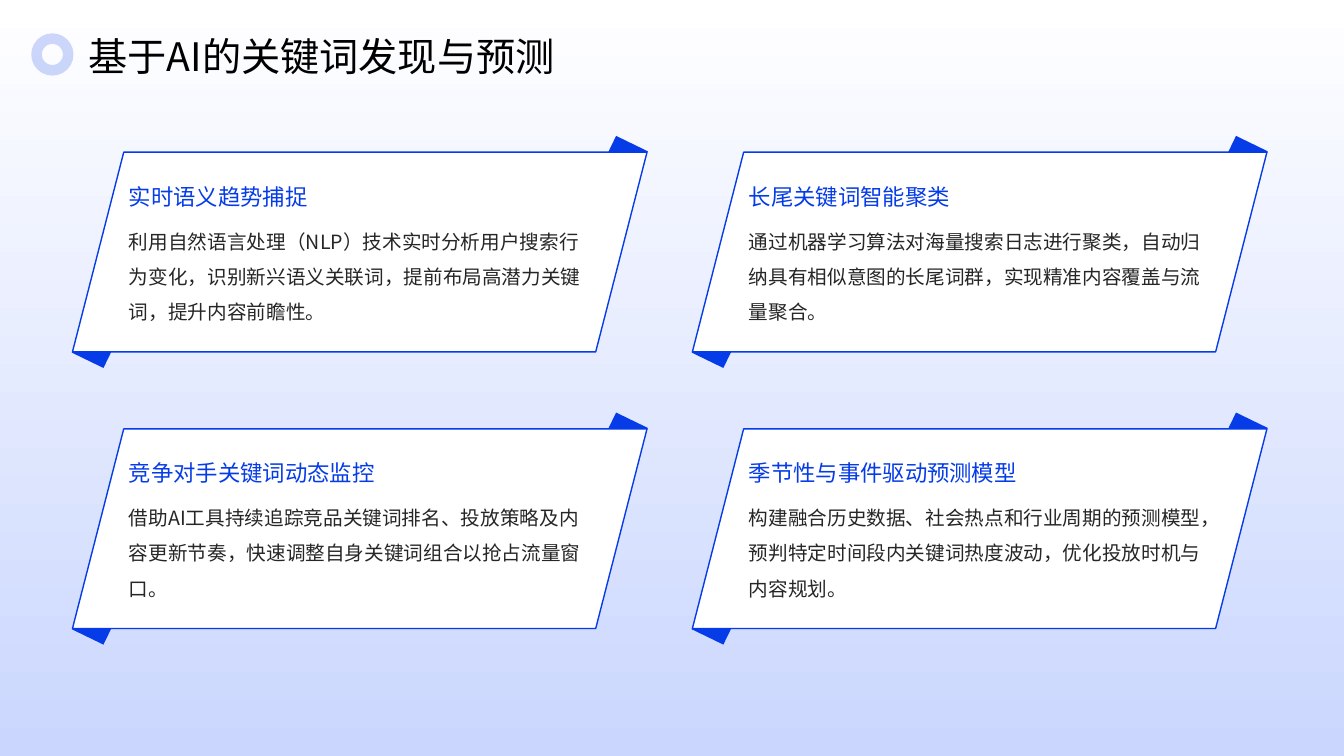
from lxml import etree
from pptx import Presentation
from pptx.dml.color import RGBColor
from pptx.enum.shapes import MSO_SHAPE
from pptx.enum.text import MSO_ANCHOR
from pptx.oxml.ns import qn
from pptx.util import Pt

RECT = MSO_SHAPE.RECTANGLE
SLANT = MSO_SHAPE.PARALLELOGRAM
RING = MSO_SHAPE.DONUT
TOP, MID = MSO_ANCHOR.TOP, MSO_ANCHOR.MIDDLE

WHITE = RGBColor(0xFF, 0xFF, 0xFF)
PALE = RGBColor(0xCA, 0xD6, 0xFE)
BLUE = RGBColor(0x06, 0x3C, 0xE8)
GRAY = RGBColor(0x26, 0x26, 0x26)
BLACK = RGBColor(0, 0, 0)

WIDTH, HEIGHT = 960, 540
LEFT, UPPER = 51.8, 108.7      # corner of the first card
STEP_X, STEP_Y = 442.8, 197.6  # pitch of the card grid

CARDS = [
    ("实时语义趋势捕捉",
     "利用自然语言处理（NLP）技术实时分析用户搜索行为变化，"
     "识别新兴语义关联词，提前布局高潜力关键词，提升内容前瞻性。"),
    ("长尾关键词智能聚类",
     "通过机器学习算法对海量搜索日志进行聚类，"
     "自动归纳具有相似意图的长尾词群，实现精准内容覆盖与流量聚合。"),
    ("竞争对手关键词动态监控",
     "借助AI工具持续追踪竞品关键词排名、投放策略及内容更新节奏，"
     "快速调整自身关键词组合以抢占流量窗口。"),
    ("季节性与事件驱动预测模型",
     "构建融合历史数据、社会热点和行业周期的预测模型，"
     "预判特定时间段内关键词热度波动，优化投放时机与内容规划。"),
]


class Deck:
    face = "Noto Sans CJK SC"

    def __init__(self):
        self.file = Presentation()
        self.file.slide_width = Pt(WIDTH)
        self.file.slide_height = Pt(HEIGHT)
        self.slide = self.file.slides.add_slide(self.file.slide_layouts[6])

    def shape(self, kind, x, y, w, h, fill, line=None):
        item = self.slide.shapes.add_shape(kind, Pt(x), Pt(y), Pt(w), Pt(h))
        item.shadow.inherit = False
        item.fill.solid()
        item.fill.fore_color.rgb = fill
        if line is None:
            item.line.fill.background()
        else:
            item.line.color.rgb = line
            item.line.width = Pt(1)
        return item

    def backdrop(self):
        fill = self.shape(RECT, 0, 0, WIDTH, HEIGHT, WHITE).fill
        fill.gradient()
        fill.gradient_angle = 270
        for stop, color, place in zip(fill.gradient_stops, (WHITE, PALE), (0, 1)):
            stop.color.rgb = color
            stop.position = place

    def ring(self, x, y, size):
        item = self.shape(RING, x, y, size, size, BLUE)
        color = item.fill._xPr.find(qn("a:solidFill"))[0]
        etree.SubElement(color, qn("a:alpha"), val="20000")

    def text(self, words, x, y, w, h, size, color, space, anchor=MID, inset=True):
        box = self.slide.shapes.add_textbox(Pt(x), Pt(y), Pt(w), Pt(h))
        frame = box.text_frame
        frame.word_wrap = True
        frame.vertical_anchor = anchor
        if not inset:
            frame.margin_left = frame.margin_right = 0
            frame.margin_top = frame.margin_bottom = 0
        para = frame.paragraphs[0]
        para.text = words
        para.line_spacing = space
        font = para.font
        font.size = Pt(size)
        font.color.rgb = color
        font.name = self.face
        # East Asian glyphs need their own typeface entry
        props = para._p.pPr.find(qn("a:defRPr"))
        etree.SubElement(props, qn("a:ea"), typeface=self.face)

    def card(self, x, y, head, body):
        # Folded corners behind the panel
        for dx, dy in ((382.3, -7.2), (2.9, 128.2)):
            self.shape(RECT, x + dx, y + dy, 25.2, 21.6, BLUE).rotation = 25.9
        panel = self.shape(SLANT, x, y, 410.4, 142.6, WHITE, BLUE)
        panel.adjustments[0] = 0.257
        self.text(body, x + 40.3, y + 46.8, 329.8, 83.5, 14, GRAY, 1.5, TOP, False)
        self.text(head, x + 40.3, y + 14.2, 329.8, 28.8, 16, BLUE, 1.3, MID, False)


def main():
    deck = Deck()
    deck.backdrop()

    # Two by two grid of cards
    for i, (head, body) in enumerate(CARDS):
        row, col = divmod(i, 2)
        deck.card(LEFT + col * STEP_X, UPPER + row * STEP_Y, head, body)

    # Title
    deck.ring(22.3, 23.8, 30.2)
    deck.text("基于AI的关键词发现与预测", 56.2, 13.7, 820, 41.8, 28, BLACK, 1.3)

    deck.file.save("out.pptx")


if __name__ == "__main__":
    main()
